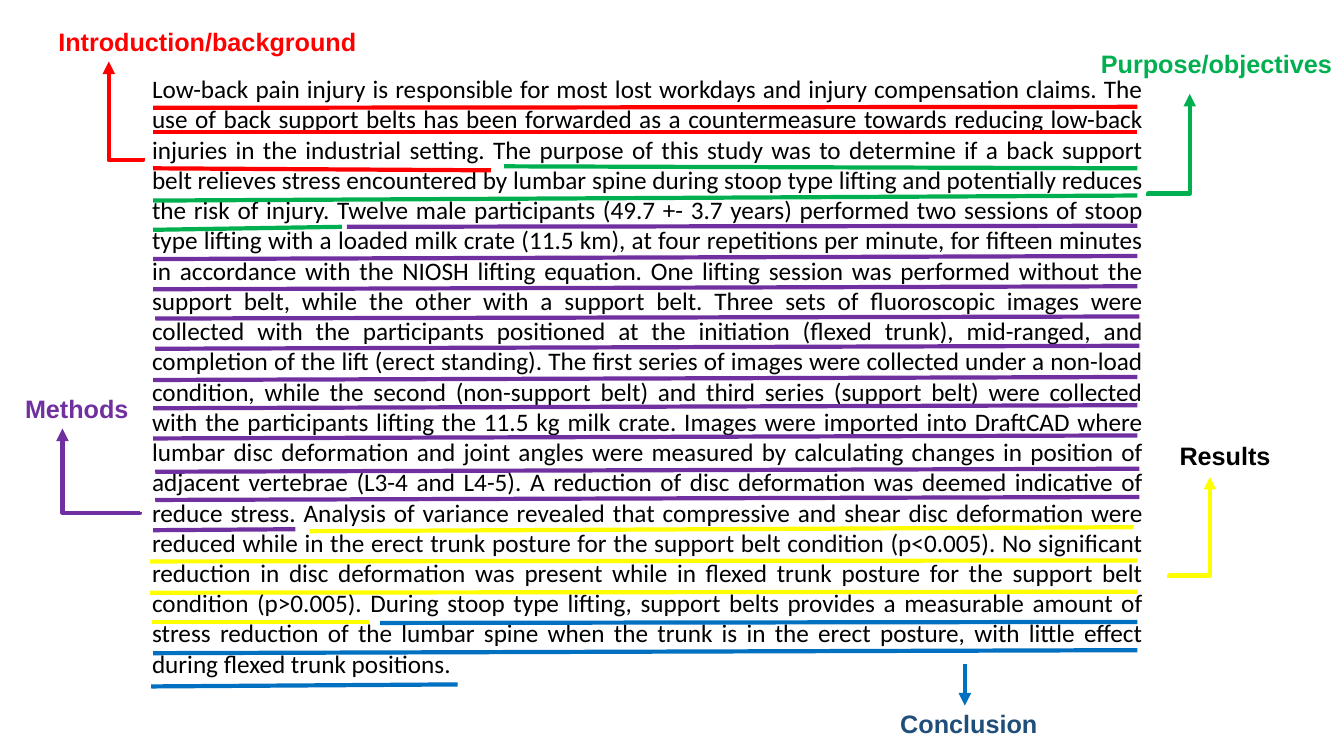
from dataclasses import dataclass

from lxml.etree import SubElement
from pptx import Presentation
from pptx.dml.color import RGBColor
from pptx.enum.shapes import MSO_CONNECTOR as Link
from pptx.enum.text import MSO_AUTO_SIZE as AutoSize, PP_ALIGN as Align
from pptx.oxml.ns import qn
from pptx.util import Inches, Pt


@dataclass(frozen=True)
class Theme:
    introduction: str = "FF0000"
    purpose: str = "00B050"
    methods: str = "7030A0"
    results: str = "FFFF00"
    conclusion: str = "0070C0"
    conclusion_label: str = "1E4E79"
    text: str = "000000"
    body_font: str = "Calibri"
    label_font: str = "Arial"
    text_size: int = 18
    line_width: int = 3


THEME = Theme()

ABSTRACT_SENTENCES = [
    "Low-back pain injury is responsible for most lost workdays and injury compensation claims.",
    "The use of back support belts has been forwarded as a countermeasure towards reducing "
    "low-back injuries in the industrial setting.",
    "The purpose of this study was to determine if a back support belt relieves stress encountered "
    "by lumbar spine during stoop type lifting and potentially reduces the risk of injury.",
    "Twelve male participants (49.7 +- 3.7 years) performed two sessions of stoop type lifting "
    "with a loaded milk crate (11.5 km), at four repetitions per minute, for fifteen minutes in "
    "accordance with the NIOSH lifting equation.",
    "One lifting session was performed without the support belt, while the other with a support "
    "belt.",
    "Three sets of fluoroscopic images were collected with the participants positioned at the "
    "initiation (flexed trunk), mid-ranged, and completion of the lift (erect standing).",
    "The first series of images were collected under a non-load condition, while the second "
    "(non-support belt) and third series (support belt) were collected with the participants "
    "lifting the 11.5 kg milk crate.",
    "Images were imported into DraftCAD where lumbar disc deformation and joint angles were "
    "measured by calculating changes in position of adjacent vertebrae (L3-4 and L4-5).",
    "A reduction of disc deformation was deemed indicative of reduce stress.",
    "Analysis of variance revealed that compressive and shear disc deformation were reduced while "
    "in the erect trunk posture for the support belt condition (p<0.005).",
    "No significant reduction in disc deformation was present while in flexed trunk posture for "
    "the support belt condition (p>0.005).",
    "During stoop type lifting, support belts provides a measurable amount of stress reduction of "
    "the lumbar spine when the trunk is in the erect posture, with little effect during flexed "
    "trunk positions.",
]

# Underlines by section: start x, start y, end x, end y
UNDERLINES = {
    THEME.introduction: [
        (1.52, 1.07, 11.28, 1.06), (1.52, 1.31, 11.28, 1.31), (1.52, 1.67, 4.87, 1.69),
    ],
    THEME.purpose: [
        (5, 1.65, 11.28, 1.67), (1.52, 1.99, 11.28, 1.94), (1.52, 2.28, 3.39, 2.25),
    ],
    THEME.methods: [
        (3.44, 2.25, 11.28, 2.24), (1.52, 2.57, 11.28, 2.54), (1.52, 2.87, 11.28, 2.84),
        (1.54, 3.16, 11.3, 3.14), (1.54, 3.46, 11.3, 3.43), (1.52, 3.77, 11.28, 3.74),
        (1.52, 4.05, 11.28, 4.02), (1.52, 4.35, 11.28, 4.32), (1.54, 4.68, 11.3, 4.65),
        (1.54, 4.96, 11.3, 4.93), (1.52, 5.26, 2.93, 5.25),
    ],
    THEME.results: [
        (3.07, 5.27, 11.24, 5.23), (1.49, 5.57, 11.28, 5.56), (1.49, 5.88, 11.28, 5.87),
        (1.51, 6.17, 3.66, 6.17),
    ],
    THEME.conclusion: [
        (3.77, 6.18, 11.28, 6.17), (1.52, 6.48, 11.28, 6.45), (1.5, 6.81, 4.54, 6.79),
    ],
}

# Label: text, colour, left, top, width
LABELS = [
    ("Introduction/background", THEME.introduction, 0.48, 0.21, 3.19),
    ("Purpose/objectives", THEME.purpose, 10.82, 0.43, 2.52),
    ("Methods", THEME.methods, 0.15, 3.85, 1.24),
    ("Results", THEME.text, 11.6, 4.32, 1.11),
    ("Conclusion", THEME.conclusion_label, 8.83, 6.98, 1.72),
]
LABEL_HEIGHT = 0.4

# Elbow arrow: colour, start x, start y, end x, end y, bend as a share of the rise
ELBOW_ARROWS = [
    (THEME.introduction, 1.42, 1.57, 1.08, 0.61, -0.02),
    (THEME.purpose, 11.39, 1.94, 11.8, 0.93, 0.02),
    (THEME.methods, 1.39, 5.08, 0.62, 4.25, -0.01),
    (THEME.results, 11.6, 5.73, 12, 4.73, 0.02),
]


class SlideWriter:
    def __init__(self, slide, theme):
        self.slide = slide
        self.theme = theme

    def text(self, words, left, top, width, height, color, font, bold=False, align=Align.LEFT):
        box = self.slide.shapes.add_textbox(*map(Inches, (left, top, width, height)))
        frame = box.text_frame
        frame.word_wrap = True
        frame.auto_size = AutoSize.SHAPE_TO_FIT_TEXT
        frame.text = words
        para = frame.paragraphs[0]
        para.alignment = align
        span = para.runs[0].font
        span.name, span.size, span.bold = font, Pt(self.theme.text_size), bold
        span.color.rgb = RGBColor.from_string(color)

    def line(self, color, x1, y1, x2, y2, arrow=False, kind=Link.STRAIGHT):
        line = self.slide.shapes.add_connector(kind, *map(Inches, (x1, y1, x2, y2)))
        line.line.width = Pt(self.theme.line_width)
        line.line.color.rgb = RGBColor.from_string(color)
        properties = line.element.spPr
        if arrow:
            SubElement(properties.find(qn("a:ln")), qn("a:tailEnd"), type="triangle")
        SubElement(properties, qn("a:effectLst"))
        return line

    def elbow_arrow(self, color, x1, y1, x2, y2, bend):
        """Run sideways from the start, then up to the end: a quarter-turned elbow."""
        middle_x, middle_y = (x1 + x2) / 2, (y1 + y2) / 2
        half_rise, half_run = abs(y2 - y1) / 2, abs(x2 - x1) / 2
        arrow = self.line(
            color, middle_x - half_rise, middle_y - half_run,
            middle_x + half_rise, middle_y + half_run, True, Link.ELBOW,
        )
        properties = arrow.element.spPr
        turn = properties.find(qn("a:xfrm"))
        leftward = x2 < x1
        turn.set("rot", str((90 if leftward else 270) * 60000))
        if leftward:
            turn.set("flipH", "1")
        geometry = properties.find(qn("a:prstGeom"))
        guides = geometry.find(qn("a:avLst"))
        if guides is None:
            guides = SubElement(geometry, qn("a:avLst"))
        SubElement(guides, qn("a:gd"), name="adj1", fmla=f"val {round(bend * 100000)}")


def main():
    deck = Presentation()
    deck.slide_width, deck.slide_height = Inches(13.33), Inches(7.5)
    page = SlideWriter(deck.slides.add_slide(deck.slide_layouts[6]), THEME)

    abstract = " ".join(ABSTRACT_SENTENCES)
    page.text(abstract, 1.41, 0.68, 10.03, 6.46, THEME.text, THEME.body_font, align=Align.JUSTIFY)
    for color, strokes in UNDERLINES.items():
        for stroke in strokes:
            page.line(color, *stroke)
    for words, color, left, top, width in LABELS:
        page.text(words, left, top, width, LABEL_HEIGHT, color, THEME.label_font, bold=True)
    for arrow in ELBOW_ARROWS:
        page.elbow_arrow(*arrow)
    page.line(THEME.conclusion, 9.57, 6.59, 9.57, 7, arrow=True)

    deck.save("out.pptx")


if __name__ == "__main__":
    main()
